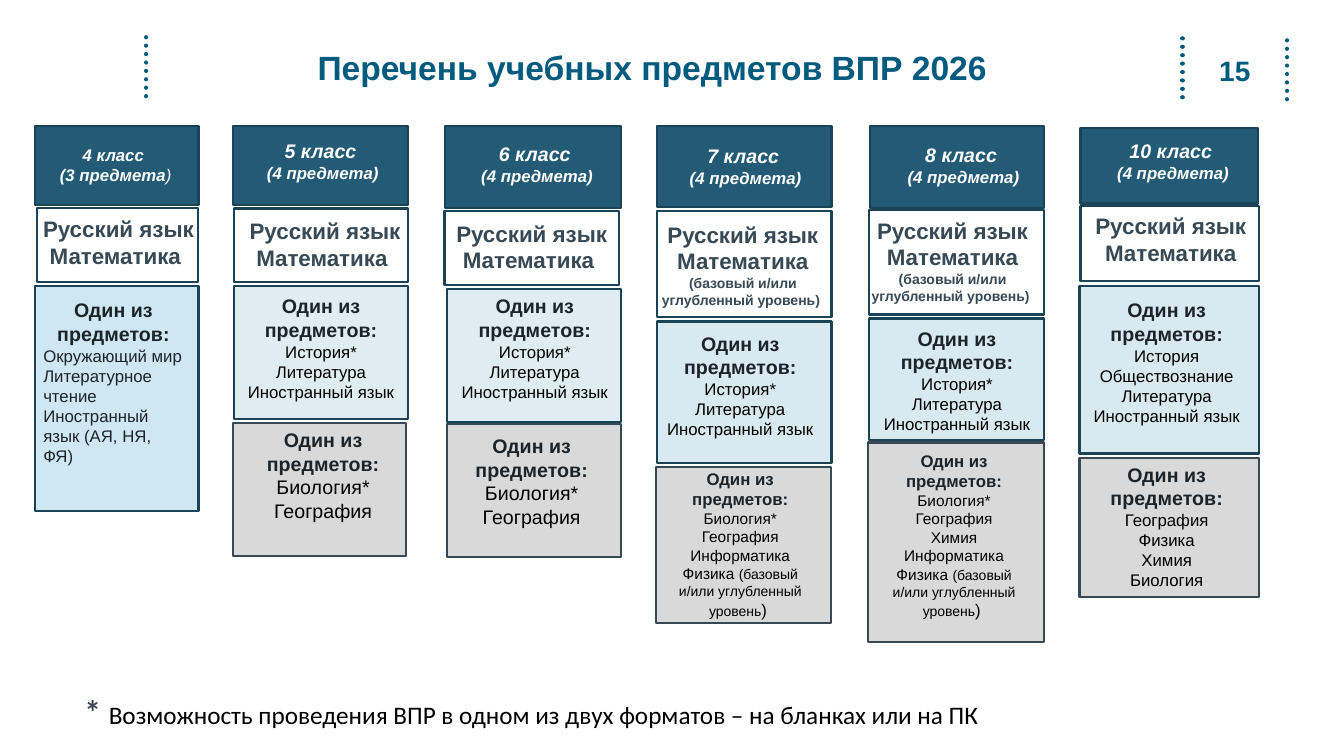
from dataclasses import dataclass
from typing import NamedTuple

from lxml.etree import SubElement
from pptx import Presentation
from pptx.dml.color import RGBColor
from pptx.enum.dml import MSO_LINE
from pptx.enum.shapes import MSO_CONNECTOR as CONN, MSO_SHAPE as SHAPE
from pptx.enum.text import MSO_ANCHOR as ANCHOR, PP_ALIGN as ALIGN
from pptx.oxml.ns import qn
from pptx.util import Pt

# Colours
TEAL = RGBColor(0x00, 0x5B, 0x7E)
HEADER = RGBColor(0x23, 0x5B, 0x77)
EDGE = RGBColor(0x1A, 0x43, 0x58)
SLATE = RGBColor(0x37, 0x49, 0x55)
INK = RGBColor(0x1C, 0x24, 0x2A)
SKY = RGBColor(0xCF, 0xE7, 0xF2)
PALE = RGBColor(0xDF, 0xED, 0xF3)
ICE = RGBColor(0xD9, 0xE9, 0xF0)
GREY = RGBColor(0xD9, 0xD9, 0xD9)
WHITE = RGBColor(0xFF, 0xFF, 0xFF)
BLACK = RGBColor(0x00, 0x00, 0x00)


class Rect(NamedTuple):
    left: float
    top: float
    width: float
    height: float

    def pts(self) -> list:
        return [Pt(v) for v in self]


class Span(NamedTuple):
    text: str
    size: float
    color: RGBColor = BLACK
    bold: bool = False
    italic: bool = False
    font: str = "Arial"


class Line(NamedTuple):
    spans: list
    align: ALIGN = ALIGN.CENTER


@dataclass
class Panel:
    box: Rect
    text: Rect
    lines: list
    fill: RGBColor | None = None
    edge: RGBColor = EDGE


# Drawing
def add_text(shapes, at: Rect, lines: list, *, anchor=ANCHOR.TOP, wrap=True, spacing=None):
    tf = shapes.add_textbox(*at.pts()).text_frame
    tf.word_wrap = wrap
    tf.vertical_anchor = anchor
    for i, line in enumerate(lines):
        p = tf.add_paragraph() if i else tf.paragraphs[0]
        p.alignment = line.align
        if spacing:
            p.line_spacing = spacing
        for span in line.spans:
            r = p.add_run()
            r.text = span.text
            r.font.name = span.font
            r.font.size = Pt(span.size)
            r.font.bold = span.bold
            r.font.italic = span.italic
            r.font.color.rgb = span.color


def add_panel(shapes, panel: Panel) -> None:
    sp = shapes.add_shape(SHAPE.RECTANGLE, *panel.box.pts())
    sp.shadow.inherit = False
    if panel.fill is None:
        sp.fill.background()
    else:
        sp.fill.solid()
        sp.fill.fore_color.rgb = panel.fill
    sp.line.color.rgb = panel.edge
    sp.line.width = Pt(1.5)
    add_text(shapes, panel.text, panel.lines)


def add_dotted_line(shapes, x: float, top: float, bottom: float) -> None:
    c = shapes.add_connector(CONN.STRAIGHT, Pt(x), Pt(top), Pt(x), Pt(bottom))
    c.line.color.rgb = TEAL
    c.line.width = Pt(3)
    c.line.dash_style = MSO_LINE.ROUND_DOT
    spPr = c._element.spPr
    spPr.find(qn("a:ln")).set("cap", "rnd")
    SubElement(spPr, qn("a:effectLst"))


# Panel kinds
def header(box: Rect, text: Rect, grade: str) -> Panel:
    lines = [Line([Span(grade, 14, WHITE, True, True)]),
             Line([Span(" (4 предмета)", 12, WHITE, True, True)])]
    return Panel(box, text, lines, HEADER)


def required(box: Rect, text: Rect, last: str = "Математика ", levels: bool = False) -> Panel:
    spans = [Span(last, 16, SLATE, True)]
    if levels:
        spans.append(Span("(базовый и/или углубленный уровень) ", 10, SLATE, True))
    return Panel(box, text, [Line([Span("Русский язык", 16, SLATE, True)]), Line(spans)])


def choice(box: Rect, text: Rect, subjects: list, fill: RGBColor, size: float = 12,
           title_size: float = 14, color: RGBColor = BLACK, align=ALIGN.CENTER,
           tail: list | None = None) -> Panel:
    lines = [Line([Span("Один из предметов:", title_size, INK, True)])]
    lines += [Line([Span(name, size, color)], align) for name in subjects]
    if tail:
        lines.append(Line(tail))
    return Panel(box, text, lines, fill, SLATE if fill == GREY else EDGE)


HUMANITIES = ["История*", "Литература", "Иностранный язык"]
NATURE = ["Биология*", "География"]
PHYSICS = [Span("Физика ", 11), Span("(базовый и/или углубленный уровень", 10), Span(") ", 12)]

# One list of panels per grade
GRADES = [
    [Panel(Rect(25.2, 90, 116.6, 56.2), Rect(26.6, 100.1, 108.7, 36),
           [Line([Span("4 класс", 12, WHITE, True, True)]),
            Line([Span(" (3 предмета", 12, WHITE, True, True),
                  Span(")", 12, WHITE, False, True)])], HEADER),
     required(Rect(26.6, 148.3, 115.2, 53.3), Rect(21.6, 150.5, 126, 46.1)),
     choice(Rect(25.2, 204.5, 116.6, 160.6), Rect(23.8, 209.5, 114.5, 133.2),
            ["Окружающий мир", "Литературное чтение", "Иностранный язык (АЯ, НЯ, ФЯ)"],
            SKY, color=INK, align=ALIGN.LEFT)],
    [header(Rect(166.3, 90, 125.3, 56.2), Rect(173.5, 95.8, 110.9, 41), "5 класс"),
     required(Rect(167, 149, 124.6, 52.6), Rect(166.3, 151.9, 131.8, 46.1)),
     choice(Rect(167, 204.5, 124.6, 95), Rect(169.9, 206.6, 118.8, 85), HUMANITIES, PALE),
     choice(Rect(166.3, 302.4, 123.8, 95), Rect(171.4, 302.4, 118.8, 74.9), NATURE, GREY, 14)],
    [header(Rect(318.2, 90, 125.3, 58.3), Rect(329.8, 97.9, 104.4, 41), "6 класс"),
     required(Rect(317.5, 150.5, 124.6, 53.3), Rect(313.9, 153.4, 131.8, 46.1)),
     choice(Rect(319, 206.6, 124.6, 95), Rect(322.6, 206.6, 118.8, 85), HUMANITIES, PALE),
     choice(Rect(319, 303.1, 124.6, 95), Rect(320.4, 306.7, 118.8, 74.9), NATURE, GREY, 14)],
    [header(Rect(469.4, 90, 124.6, 57.6), Rect(473, 99.4, 115.9, 41), "7 класс"),
     required(Rect(469.4, 150.5, 124.6, 76.3), Rect(465.1, 154.1, 131, 70.6), levels=True),
     choice(Rect(469.4, 229.7, 124.6, 100.8), Rect(469.4, 233.3, 118.8, 85), HUMANITIES, ICE),
     choice(Rect(468.7, 333.4, 124.6, 111.6), Rect(469.4, 331.2, 118.8, 116.6),
            NATURE + ["Информатика"], GREY, 11, 12, tail=PHYSICS)],
    [header(Rect(621.4, 90, 124.6, 58.3), Rect(632.2, 98.6, 108.7, 41.8), "8 класс"),
     required(Rect(620.6, 149.8, 125.3, 74.9), Rect(614.9, 151.2, 131, 70.6), levels=True),
     choice(Rect(620.6, 227.5, 125.3, 87.1), Rect(624.2, 229.7, 118.8, 85), HUMANITIES, ICE),
     choice(Rect(619.9, 316.1, 126, 142.6), Rect(622.1, 318.2, 118.8, 129.6),
            NATURE + ["Химия", "Информатика"], GREY, 11, 12, tail=PHYSICS)],
    [header(Rect(771.8, 91.4, 126.7, 54), Rect(781.9, 95.8, 108.7, 41), "10 класс"),
     required(Rect(771.8, 146.9, 127.4, 54), Rect(773.3, 148.3, 126, 46.1), "Математика"),
     choice(Rect(771.1, 204.5, 128.2, 119.5), Rect(774, 209.5, 118.8, 99.4),
            ["История", "Обществознание", "Литература", "Иностранный язык"], ICE),
     choice(Rect(771.1, 326.9, 128.2, 99.4), Rect(774, 326.9, 118.8, 99.4),
            ["География", "Физика", "Химия", "Биология"], GREY)],
]


def main() -> None:
    prs = Presentation()
    prs.slide_width, prs.slide_height = Pt(960), Pt(540)
    s = prs.slides.add_slide(prs.slide_layouts[6])

    # Title band
    for x, top in ((104.4, 26.6), (844.6, 27.4), (919.4, 28.8)):
        add_dotted_line(s.shapes, x, top, 71.3)
    add_text(s.shapes, Rect(862.6, 31, 38.9, 38.2), [Line([Span("15", 20, TEAL, True)])],
             anchor=ANCHOR.MIDDLE)
    add_text(s.shapes, Rect(101.5, 21.6, 728.6, 56.9),
             [Line([Span("Перечень учебных предметов ВПР 2026", 24, TEAL, True)])],
             anchor=ANCHOR.MIDDLE, spacing=0.9)

    # Grade columns
    for panels in GRADES:
        column = s.shapes.add_group_shape()
        for panel in panels:
            add_panel(column.shapes, panel)

    # Footnote
    note = "Возможность проведения ВПР в одном из двух форматов – на бланках или на ПК"
    add_text(s.shapes, Rect(53.3, 490.3, 664.6, 36),
             [Line([Span("* ", 24, SLATE, True, font="Calibri"),
                    Span(note, 18, font="Calibri")], ALIGN.LEFT)], wrap=False)
    prs.save("out.pptx")


if __name__ == "__main__":
    main()
